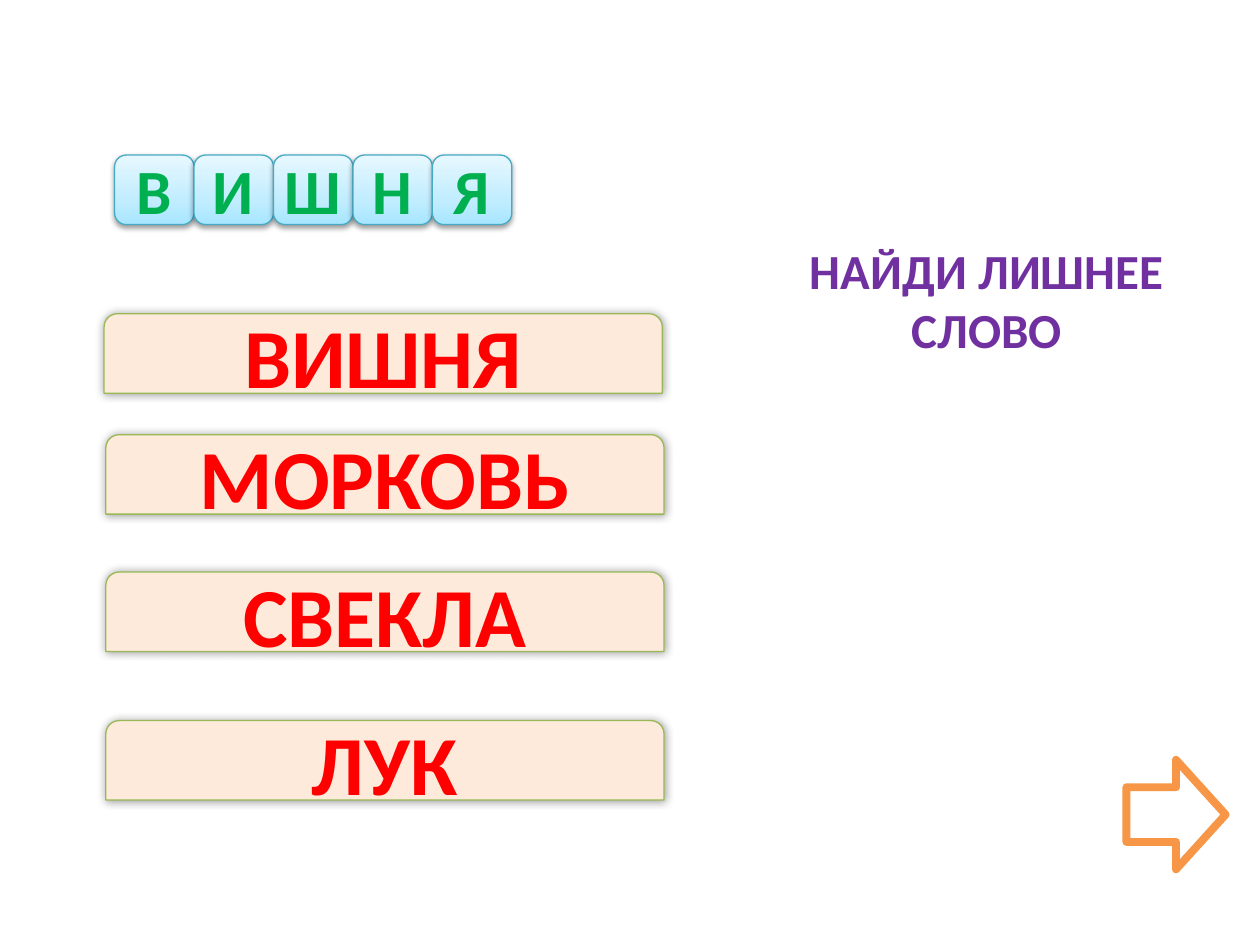
from copy import deepcopy

from lxml.etree import SubElement
from pptx import Presentation
from pptx.dml.color import RGBColor
from pptx.enum.shapes import MSO_SHAPE
from pptx.enum.text import MSO_ANCHOR, MSO_AUTO_SIZE, PP_ALIGN
from pptx.oxml.ns import qn
from pptx.util import Pt

TILE_STOPS = [(0, "A7E6FF"), (0.35, "C1EDFF"), (1, "E7F8FF")]
LETTERS = [("В", 34.6), ("И", 38.2), ("Ш", 47.5), ("Н", 37.4), ("Я", 35.3)]
WORDS = [("ВИШНЯ", 59.5, 179.3), ("МОРКОВЬ", 60.5, 248.4),
         ("СВЕКЛА", 60.5, 326.9), ("ЛУК", 60.5, 411.8)]


def rgb(value):
    return RGBColor.from_string(value)


def add_shadow(sp, alpha, blur, dist, angle):
    effects = sp._element.spPr.find(qn("a:effectLst"))
    shadow = SubElement(effects, qn("a:outerShdw"), blurRad=str(Pt(blur)),
                        dist=str(Pt(dist)), dir=str(angle * 60000), rotWithShape="0")
    color = SubElement(shadow, qn("a:srgbClr"), val="000000")
    SubElement(color, qn("a:alpha"), val=str(alpha * 1000))


def add_box(shapes, kind, box, line, width, fill=None):
    sp = shapes.add_shape(kind, *map(Pt, box))
    sp.shadow.inherit = False
    sp.line.color.rgb = rgb(line)
    sp.line.width = Pt(width)
    if fill:
        sp.fill.solid()
        sp.fill.fore_color.rgb = rgb(fill)
    return sp


def set_text(tf, text, size, color, align):
    p = tf.paragraphs[0]
    p.alignment = align
    r = p.add_run()
    r.text = text
    for name, value in {"name": "Calibri", "size": Pt(size), "bold": True}.items():
        setattr(r.font, name, value)
    r.font.color.rgb = rgb(color)


def add_label(shapes, box, text, size, color, align, wrap):
    tf = shapes.add_textbox(*map(Pt, box)).text_frame
    tf.word_wrap = wrap
    tf.auto_size = MSO_AUTO_SIZE.SHAPE_TO_FIT_TEXT
    set_text(tf, text, size, color, align)


def add_tiles(s, left, top, width, height):
    group = s.shapes.add_group_shape()
    step = width / len(LETTERS)
    for i in range(len(LETTERS)):
        sp = add_box(group.shapes, MSO_SHAPE.ROUNDED_RECTANGLE,
                     (left + i * step, top, step, height), "46AAC5", 0.75)
        sp.fill.gradient()
        sp.fill.gradient_angle = 90
        stops = sp._element.spPr.find(".//" + qn("a:gsLst"))
        stops.append(deepcopy(stops[0]))
        for stop, (position, color) in zip(sp.fill.gradient_stops, TILE_STOPS):
            stop.position = position
            stop.color.rgb = rgb(color)
        add_shadow(sp, 38, 3.1, 1.6, 90)


def add_letters(s, left, top, width, height):
    group = s.shapes.add_group_shape()
    step = width / len(LETTERS)
    for i, (letter, letter_width) in enumerate(LETTERS):
        x = left + i * step + (step - letter_width) / 2
        add_label(group.shapes, (x, top, letter_width, height), letter, 36,
                  "00B050", PP_ALIGN.LEFT, False)


def add_word(s, left, top, width, height, word):
    sp = add_box(s.shapes, MSO_SHAPE.ROUND_2_SAME_RECTANGLE,
                 (left, top, width, height), "98B955", 0.75, "FDEADA")
    add_shadow(sp, 40, 5, 0, 0)
    sp.text_frame.vertical_anchor = MSO_ANCHOR.MIDDLE
    set_text(sp.text_frame, word, 48, "FF0000", PP_ALIGN.CENTER)


def main():
    prs = Presentation()
    prs.slide_width, prs.slide_height = Pt(720), Pt(540)
    s = prs.slides.add_slide(prs.slide_layouts[6])
    add_tiles(s, 65.5, 88.6, 227, 39.7)
    for word, left, top in WORDS:
        add_word(s, left, top, 319, 45.4, word)
    add_letters(s, 65.5, 82.8, 227, 50.9)
    add_label(s.shapes, (427.7, 133.9, 272.2, 75), "НАЙДИ ЛИШНЕЕ СЛОВО", 28,
              "7030A0", PP_ALIGN.CENTER, True)
    add_box(s.shapes, MSO_SHAPE.RIGHT_ARROW, (643.7, 434.2, 56.7, 62.6),
            "F79646", 4.5, "FFFFFF")
    prs.save("out.pptx")


if __name__ == "__main__":
    main()
